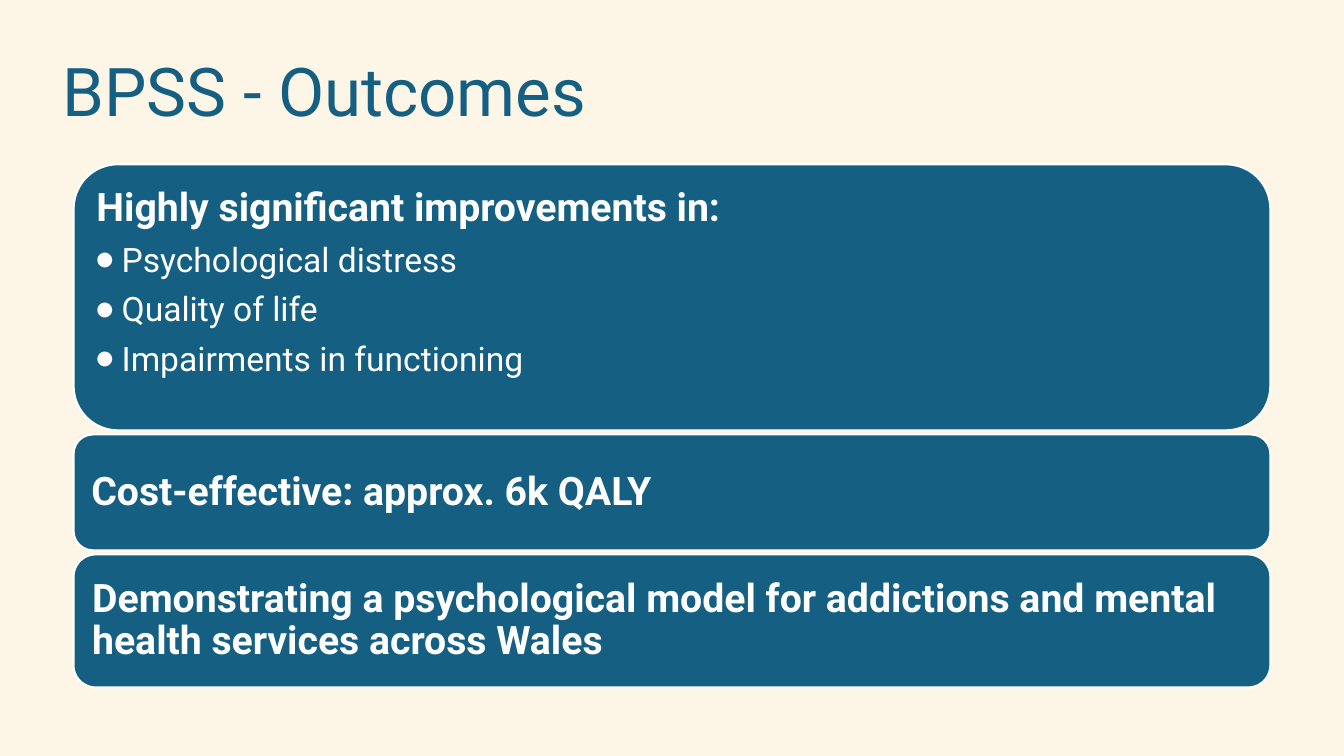
from lxml.etree import SubElement
from pptx import Presentation
from pptx.dml.color import RGBColor
from pptx.enum.shapes import MSO_SHAPE
from pptx.enum.text import MSO_ANCHOR, MSO_AUTO_SIZE, PP_ALIGN
from pptx.oxml.ns import qn
from pptx.util import Inches, Pt

COLOURS = {"background": "FDF6E6", "panel": "156082", "light": "FFFFFF"}
FONT = "Roboto"
PANEL_LEFT, PANEL_WIDTH = 0.73, 11.87
HEADING = {"size": Pt(28), "bold": True}
ITEM = {"size": Pt(24), "bold": False}


def colour(name):
    return RGBColor.from_string(COLOURS[name])


def set_attributes(target, values):
    for name, value in values.items():
        setattr(target, name, value)


def write(para, text, colour_name, font_values):
    span = para.add_run()
    span.text = text
    set_attributes(span.font, {"name": FONT, **font_values})
    span.font.color.rgb = colour(colour_name)


def add_bullet(para):
    """Give the paragraph a small round bullet with a hanging indent."""
    properties = para._p.get_or_add_pPr()
    properties.set("marL", str(Inches(0.25)))
    properties.set("indent", str(-Inches(0.25)))
    SubElement(properties, qn("a:buSzPct")).set("val", "58000")
    SubElement(properties, qn("a:buFont")).set("typeface", FONT)
    SubElement(properties, qn("a:buChar")).set("char", "●")


def add_title(page, text):
    title = page.shapes.title
    set_attributes(title, {"left": Inches(0.52), "top": Inches(0.43),
                           "width": Inches(10.09), "height": Inches(0.91)})
    frame = title.text_frame
    set_attributes(frame, {"auto_size": MSO_AUTO_SIZE.NONE, "word_wrap": True,
                           "vertical_anchor": MSO_ANCHOR.MIDDLE})
    para = frame.paragraphs[0]
    para.alignment = PP_ALIGN.LEFT
    write(para, text, "panel", {"size": Pt(48)})


def add_panel(page, top, height, heading, items=(), inset=0.12):
    box = page.shapes.add_shape(MSO_SHAPE.ROUNDED_RECTANGLE, Inches(PANEL_LEFT),
                                Inches(top), Inches(PANEL_WIDTH), Inches(height))
    box.shadow.inherit = False
    box.fill.solid()
    box.fill.fore_color.rgb = colour("panel")
    box.line.color.rgb = colour("light")
    box.line.width = Pt(1.5)

    frame = box.text_frame
    anchor = MSO_ANCHOR.TOP if items else MSO_ANCHOR.MIDDLE
    set_attributes(frame, {"word_wrap": True, "vertical_anchor": anchor})
    for side in ("left", "top", "right", "bottom"):
        setattr(frame, f"margin_{side}", Inches(inset))

    para = frame.paragraphs[0]
    set_attributes(para, {"alignment": PP_ALIGN.LEFT, "line_spacing": 0.9})
    write(para, heading, "light", HEADING)
    for item in items:
        para.space_after = Pt(9.5)
        para = frame.add_paragraph()
        set_attributes(para, {"alignment": PP_ALIGN.LEFT, "line_spacing": 0.9})
        add_bullet(para)
        write(para, item, "light", ITEM)


def main():
    deck = Presentation()
    set_attributes(deck, {"slide_width": Inches(13.33), "slide_height": Inches(7.5)})
    page = deck.slides.add_slide(deck.slide_layouts[5])
    page.background.fill.solid()
    page.background.fill.fore_color.rgb = colour("background")

    add_title(page, "BPSS - Outcomes")
    add_panel(page, 1.63, 2.64, "Highly significant improvements in:",
              ["Psychological distress", "Quality of life", "Impairments in functioning"],
              inset=0.1)
    add_panel(page, 4.31, 1.15, "Cost-effective: approx. 6k QALY")
    add_panel(page, 5.5, 1.32, "Demonstrating a psychological model for addictions "
                               "and mental health services across Wales")
    deck.save("out.pptx")


if __name__ == "__main__":
    main()
